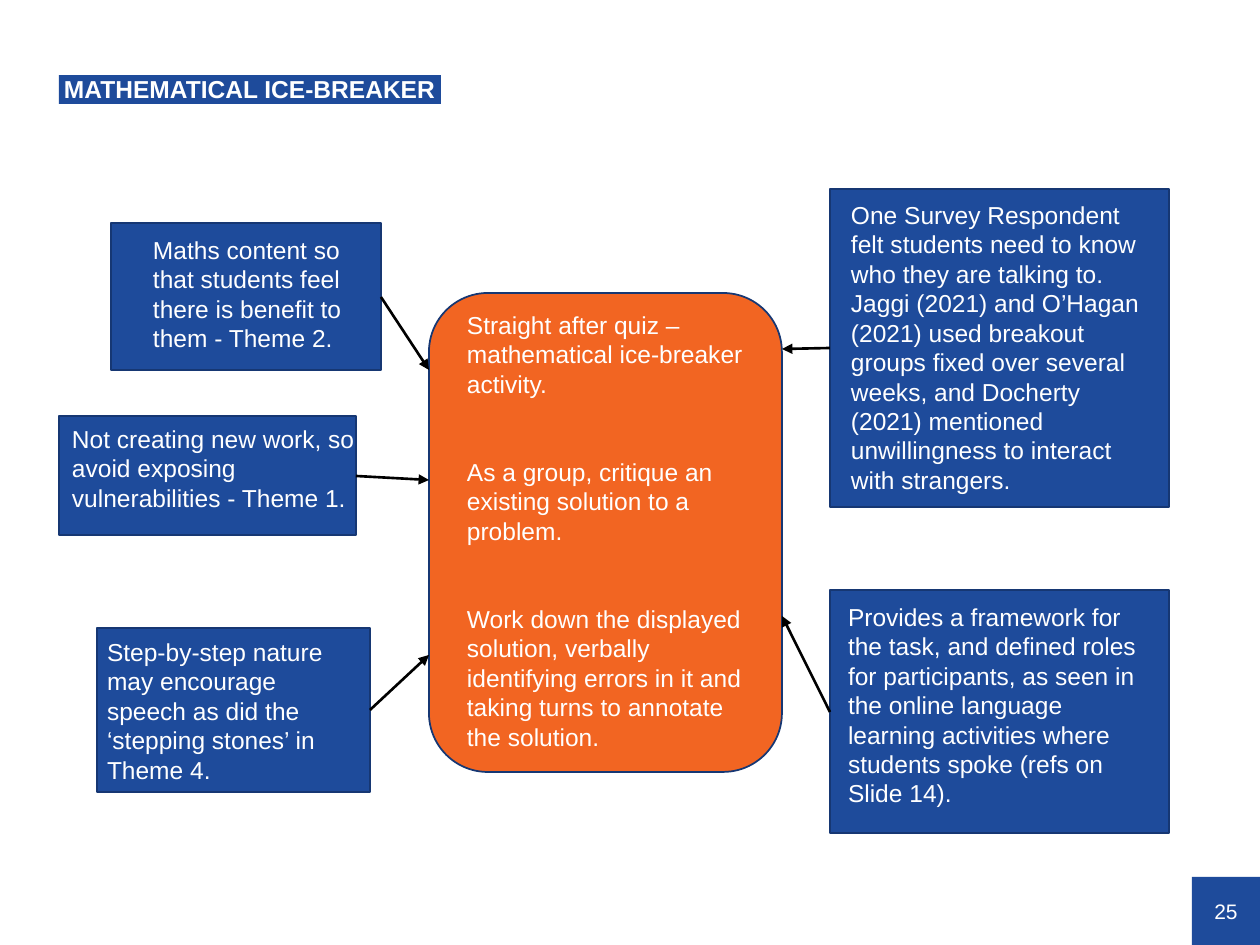
from dataclasses import dataclass

from lxml import etree
from pptx import Presentation
from pptx.dml.color import RGBColor
from pptx.enum.shapes import MSO_CONNECTOR, MSO_SHAPE
from pptx.enum.text import MSO_ANCHOR, PP_ALIGN
from pptx.oxml.ns import qn
from pptx.util import Emu, Pt

RECT, ROUNDED = MSO_SHAPE.RECTANGLE, MSO_SHAPE.ROUNDED_RECTANGLE
STRAIGHT = MSO_CONNECTOR.STRAIGHT
TOP, MIDDLE = MSO_ANCHOR.TOP, MSO_ANCHOR.MIDDLE
LEFT, CENTER = PP_ALIGN.LEFT, PP_ALIGN.CENTER
PX = 914400 / 126


@dataclass(frozen=True)
class Theme:
    font: str = "Arial"
    blue: str = "1E4B9B"
    orange: str = "F26522"
    outline: str = "163773"
    arrow: str = "000000"
    text: str = "FFFFFF"
    body: int = 14
    number: int = 12
    leading: float = 16.8
    gap: float = 33.6


THEME = Theme()

TITLE = ("MATHEMATICAL ICE-BREAKER", (59, 75, 382, 29))
PAGE = ("25", (1192, 877, 68, 68))

ACTIVITY = {
    "box": (429, 293, 353, 479),
    "text_box": (454, 304, 313, 459),
    "text": [
        "Straight after quiz – mathematical ice-breaker activity.",
        "As a group, critique an existing solution to a problem.",
        "Work down the displayed solution, verbally identifying errors in it "
        "and taking turns to annotate the solution.",
    ],
}

REASONS = [
    {
        "box": (830, 189, 339, 318),
        "text_box": (838, 194, 320, 310),
        "arrow": (830, 348, 782, 349),
        "text": "One Survey Respondent felt students need to know who they are "
                "talking to. Jaggi (2021) and O’Hagan (2021) used breakout groups "
                "fixed over several weeks, and Docherty (2021) mentioned "
                "unwillingness to interact with strangers.",
    },
    {
        "box": (111, 223, 270, 147),
        "text_box": (140, 229, 258, 131),
        "arrow": (381, 297, 429, 370),
        "text": "Maths content so that students feel there is benefit to them - Theme 2.",
    },
    {
        "box": (59, 416, 297, 119),
        "text_box": (59, 418, 310, 102),
        "arrow": (356, 476, 429, 480),
        "text": "Not creating new work, so avoid exposing vulnerabilities - Theme 1.",
    },
    {
        "box": (830, 590, 339, 243),
        "text_box": (835, 596, 333, 190),
        "arrow": (830, 712, 782, 616),
        "text": "Provides a framework for the task, and defined roles for participants, "
                "as seen in the online language learning activities where students "
                "spoke (refs on Slide 14).",
    },
    {
        "box": (97, 628, 273, 164),
        "text_box": (94, 631, 260, 161),
        "arrow": (370, 710, 429, 655),
        "text": "Step-by-step nature may encourage speech as did the "
                "‘stepping stones’ in Theme 4.",
    },
]


def emu(lengths):
    return [Emu(round(n * PX)) for n in lengths]


def rgb(color):
    return RGBColor.from_string(color)


def write(sp, paragraphs, size=THEME.body, bold=False, align=LEFT, anchor=TOP,
          insets=(13, 6, 13, 6), leading=Pt(THEME.leading)):
    tf = sp.text_frame
    tf.word_wrap = True
    tf.vertical_anchor = anchor
    tf.margin_left, tf.margin_top, tf.margin_right, tf.margin_bottom = emu(insets)
    for i, text in enumerate(paragraphs):
        p = tf.add_paragraph() if i else tf.paragraphs[0]
        p.alignment = align
        p.line_spacing = leading
        if i:
            p.space_before = Pt(THEME.gap)
        r = p.add_run()
        r.text = text
        r.font.name = THEME.font
        r.font.size = Pt(size)
        r.font.bold = bold
        r.font.color.rgb = rgb(THEME.text)


def add_box(s, box, fill, shape=RECT, outlined=True):
    sp = s.shapes.add_shape(shape, *emu(box))
    sp.shadow.inherit = False
    sp.fill.solid()
    sp.fill.fore_color.rgb = rgb(fill)
    if outlined:
        sp.line.color.rgb = rgb(THEME.outline)
        sp.line.width = Pt(1)
    else:
        sp.line.fill.background()
    return sp


def add_arrow(s, ends):
    cx = s.shapes.add_connector(STRAIGHT, *emu(ends))
    cx.line.color.rgb = rgb(THEME.arrow)
    cx.line.width = Pt(1.5)
    etree.SubElement(cx.line._get_or_add_ln(), qn("a:tailEnd"), type="triangle")
    etree.SubElement(cx._element.spPr, qn("a:effectLst"))


def main():
    prs = Presentation()
    prs.slide_width, prs.slide_height = emu((1260, 945))
    s = prs.slides.add_slide(prs.slide_layouts[6])

    text, box = PAGE
    write(add_box(s, box, THEME.blue, outlined=False), [text], size=THEME.number,
          align=CENTER, anchor=MIDDLE, insets=(0, 0, 0, 0), leading=1.0)
    text, box = TITLE
    write(add_box(s, box, THEME.blue, outlined=False), [text], bold=True,
          anchor=MIDDLE, insets=(5, 3, 0, 0), leading=0.9)

    add_box(s, ACTIVITY["box"], THEME.orange, shape=ROUNDED)
    write(s.shapes.add_textbox(*emu(ACTIVITY["text_box"])), ACTIVITY["text"])

    for reason in REASONS:
        add_box(s, reason["box"], THEME.blue)
        write(s.shapes.add_textbox(*emu(reason["text_box"])), [reason["text"]])
        add_arrow(s, reason["arrow"])

    prs.save("out.pptx")


if __name__ == "__main__":
    main()
